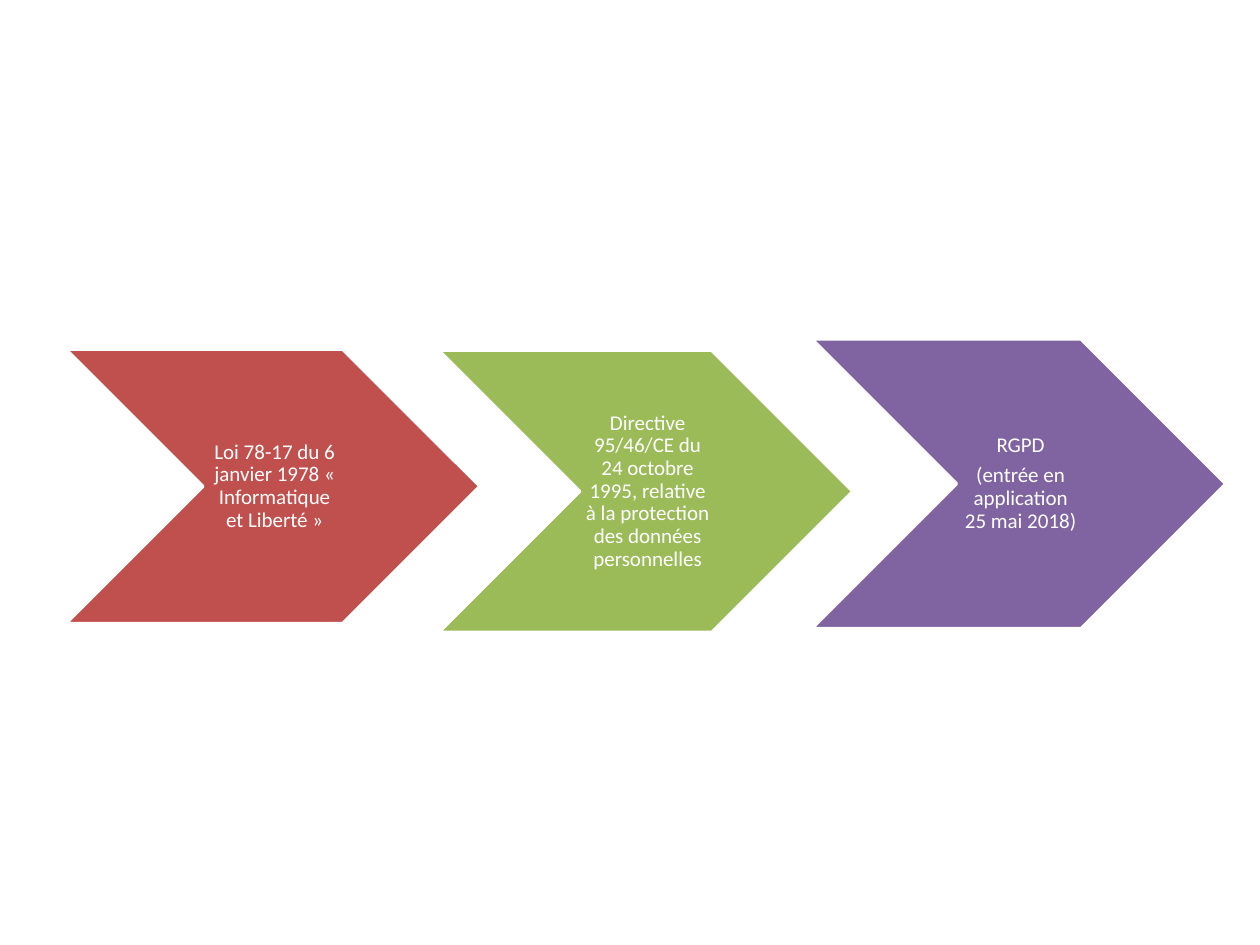
from dataclasses import dataclass

from pptx import Presentation
from pptx.dml.color import RGBColor
from pptx.enum.shapes import MSO_SHAPE as Shape
from pptx.enum.text import MSO_ANCHOR as Anchor, PP_ALIGN as Align
from pptx.util import Inches, Pt


@dataclass(frozen=True)
class Theme:
    font: str = "Calibri"
    size: float = 12
    white: RGBColor = RGBColor(0xFF, 0xFF, 0xFF)
    red: RGBColor = RGBColor(0xC0, 0x50, 0x4D)
    green: RGBColor = RGBColor(0x9B, 0xBB, 0x59)
    purple: RGBColor = RGBColor(0x80, 0x64, 0xA2)


THEME = Theme()

# Top, height, colour and paragraphs of each legal milestone
MILESTONES = [
    (2.77, 2.18, THEME.red,
     ["Loi 78-17 du 6 janvier 1978 « Informatique et Liberté »"]),
    (2.78, 2.24, THEME.green,
     ["Directive 95/46/CE du 24 octobre 1995, relative à la protection "
      "des données personnelles"]),
    (2.69, 2.30, THEME.purple,
     ["RGPD", "(entrée en application 25 mai 2018)"]),
]

FRAME_FORMAT = {
    "word_wrap": True,
    "vertical_anchor": Anchor.MIDDLE,
    "margin_left": Inches(0.05),
    "margin_top": Inches(0.02),
    "margin_right": Inches(0.02),
    "margin_bottom": Inches(0.02),
}
PARAGRAPH_FORMAT = {
    "alignment": Align.CENTER,
    "line_spacing": 0.9,
    "space_after": Pt(0.35 * THEME.size),
}


def apply_format(target, values):
    for attribute, value in values.items():
        setattr(target, attribute, value)


def add_milestone(slide, left, top, width, height, color, paragraphs):
    """Place one chevron, with its label inside, in the given box."""
    chevron = slide.shapes.add_shape(Shape.CHEVRON, left, top, width, height)
    chevron.shadow.inherit = False
    chevron.fill.solid()
    chevron.fill.fore_color.rgb = color
    chevron.line.color.rgb = THEME.white
    chevron.line.width = Pt(2)

    # Label
    label = chevron.text_frame
    apply_format(label, FRAME_FORMAT)
    for index, wording in enumerate(paragraphs):
        paragraph = label.add_paragraph() if index else label.paragraphs[0]
        apply_format(paragraph, PARAGRAPH_FORMAT)
        run = paragraph.add_run()
        run.text = wording
        apply_format(run.font, {"name": THEME.font, "size": Pt(THEME.size)})
        run.font.color.rgb = THEME.white


def add_timeline(slide, left, width, pitch):
    """Lay the milestones out from left to right at an equal pitch."""
    for index, (top, height, color, paragraphs) in enumerate(MILESTONES):
        add_milestone(slide, left + index * pitch, Inches(top), width,
                      Inches(height), color, paragraphs)


def main():
    deck = Presentation()
    deck.slide_width, deck.slide_height = Inches(10), Inches(7.5)
    slide = deck.slides.add_slide(deck.slide_layouts[6])
    add_timeline(slide, Inches(0.52), Inches(3.29), Inches(2.96))
    deck.save("out.pptx")


if __name__ == "__main__":
    main()
